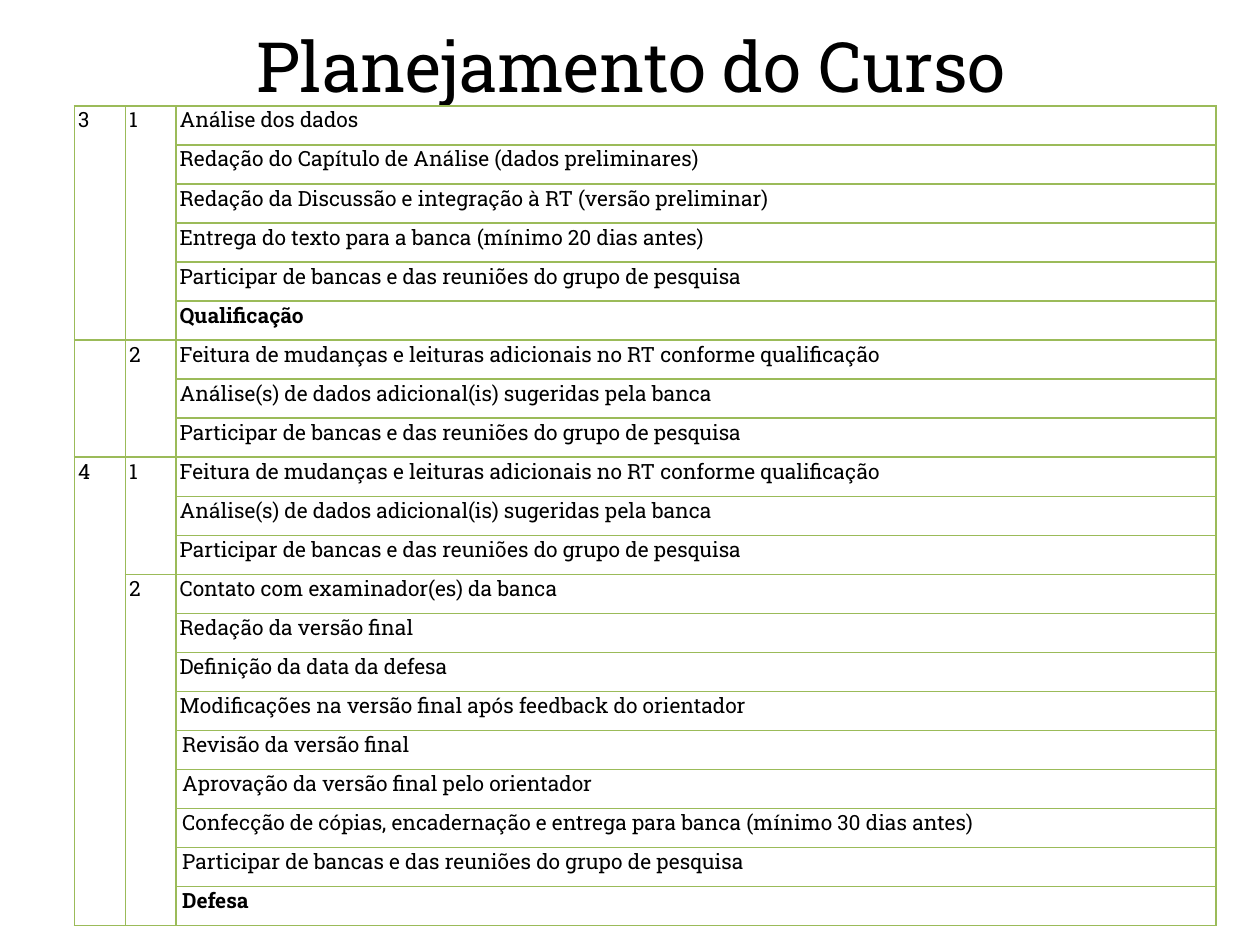
from lxml.etree import SubElement
from pptx import Presentation
from pptx.dml.color import RGBColor
from pptx.enum.text import MSO_ANCHOR, PP_ALIGN
from pptx.oxml.ns import qn
from pptx.util import Pt

FONT = "Roboto Slab"
BLACK, GREEN = "000000", "9BBB59"
COL_WIDTHS = (29.2, 28.8, 594.3)
ROW_HEIGHT = 22.32

GROUP_WORK = "Participar de bancas e das reuniões do grupo de pesquisa"
REVISION = [
    "Feitura de mudanças e leituras adicionais no RT conforme qualificação",
    "Análise(s) de dados adicional(is) sugeridas pela banca",
    GROUP_WORK,
]
# Year, semester, activities
PLAN = [
    ("3", "1", [
        "Análise dos dados",
        "Redação do Capítulo de Análise (dados preliminares)",
        "Redação da Discussão e integração à RT (versão preliminar)",
        "Entrega do texto para a banca (mínimo 20 dias antes)",
        GROUP_WORK,
        "Qualificação",
    ]),
    ("", "2", REVISION),
    ("4", "1", REVISION),
    ("4", "2", [
        "Contato com examinador(es) da banca",
        "Redação da versão final",
        "Definição da data da defesa",
        "Modificações na versão final após feedback do orientador",
        "Revisão da versão final",
        "Aprovação da versão final pelo orientador",
        "Confecção de cópias, encadernação e entrega para banca (mínimo 30 dias antes)",
        GROUP_WORK,
        "Defesa",
    ]),
]
MILESTONES = {"Qualificação", "Defesa"}
FIRST_WIDE_ROW = 16  # the last rows have a wider side margin


def rgb(color):
    return RGBColor.from_string(color)


def style_run(r, size, bold=False):
    r.font.name, r.font.size, r.font.bold = FONT, Pt(size), bold
    r.font.color.rgb = rgb(BLACK)


def add_title(slide, text, x, y, w, h):
    tf = slide.shapes.add_textbox(Pt(x), Pt(y), Pt(w), Pt(h)).text_frame
    tf.word_wrap = True
    tf.vertical_anchor = MSO_ANCHOR.MIDDLE
    tf.text = text
    p = tf.paragraphs[0]
    p.alignment = PP_ALIGN.CENTER
    style_run(p.runs[0], 39.6)


def set_borders(cell, color, width):
    tc_pr = cell._tc.get_or_add_tcPr()
    for side in ("lnL", "lnR", "lnT", "lnB"):
        ln = SubElement(tc_pr, qn(f"a:{side}"), w=str(Pt(width)))
        fill = SubElement(ln, qn("a:solidFill"))
        SubElement(fill, qn("a:srgbClr"), val=color)


def format_cell(cell, margin):
    cell.margin_left = cell.margin_right = Pt(margin)
    cell.margin_top = cell.margin_bottom = 0
    set_borders(cell, GREEN, 1)
    cell.fill.background()
    p = cell.text_frame.paragraphs[0]
    for r in p.runs:
        style_run(r, 12, r.text in MILESTONES)
    if not p.runs:  # keeps empty cells from stretching their row
        SubElement(p._p, qn("a:endParaRPr"), sz="1200")


def add_plan(slide, x, y, w, h):
    n_rows = sum(len(activities) for _, _, activities in PLAN)
    table = slide.shapes.add_table(n_rows, 3, Pt(x), Pt(y), Pt(w), Pt(h)).table
    table.first_row = table.horz_banding = False
    for col, width in zip(table.columns, COL_WIDTHS):
        col.width = Pt(width)
    for row in table.rows:
        row.height = Pt(h / n_rows)

    # Text, with one merged cell per year and per semester
    top, year_top, last_year = 0, 0, None
    year_spans = {}
    for year, semester, activities in PLAN:
        bottom = top + len(activities) - 1
        if year != last_year:
            year_top, last_year = top, year
            table.cell(top, 0).text = year
        year_spans[year_top] = bottom
        table.cell(top, 1).text = semester
        table.cell(top, 1).merge(table.cell(bottom, 1))
        for i, activity in enumerate(activities, top):
            table.cell(i, 2).text = activity
        top = bottom + 1
    for first, last in year_spans.items():
        table.cell(first, 0).merge(table.cell(last, 0))

    # Margins, borders and font
    for i in range(n_rows):
        for j in range(3):
            wide = j == 2 and i >= FIRST_WIDE_ROW
            format_cell(table.cell(i, j), 3.6 if wide else 2.16)


def main():
    prs = Presentation()
    prs.slide_width, prs.slide_height = Pt(720), Pt(540)
    slide = prs.slides.add_slide(prs.slide_layouts[6])
    add_title(slide, "Planejamento do Curso", 36.7, 9.4, 648, 55.4)
    add_plan(slide, 42.5, 60.5, sum(COL_WIDTHS), 21 * ROW_HEIGHT)
    prs.save("out.pptx")


if __name__ == "__main__":
    main()
